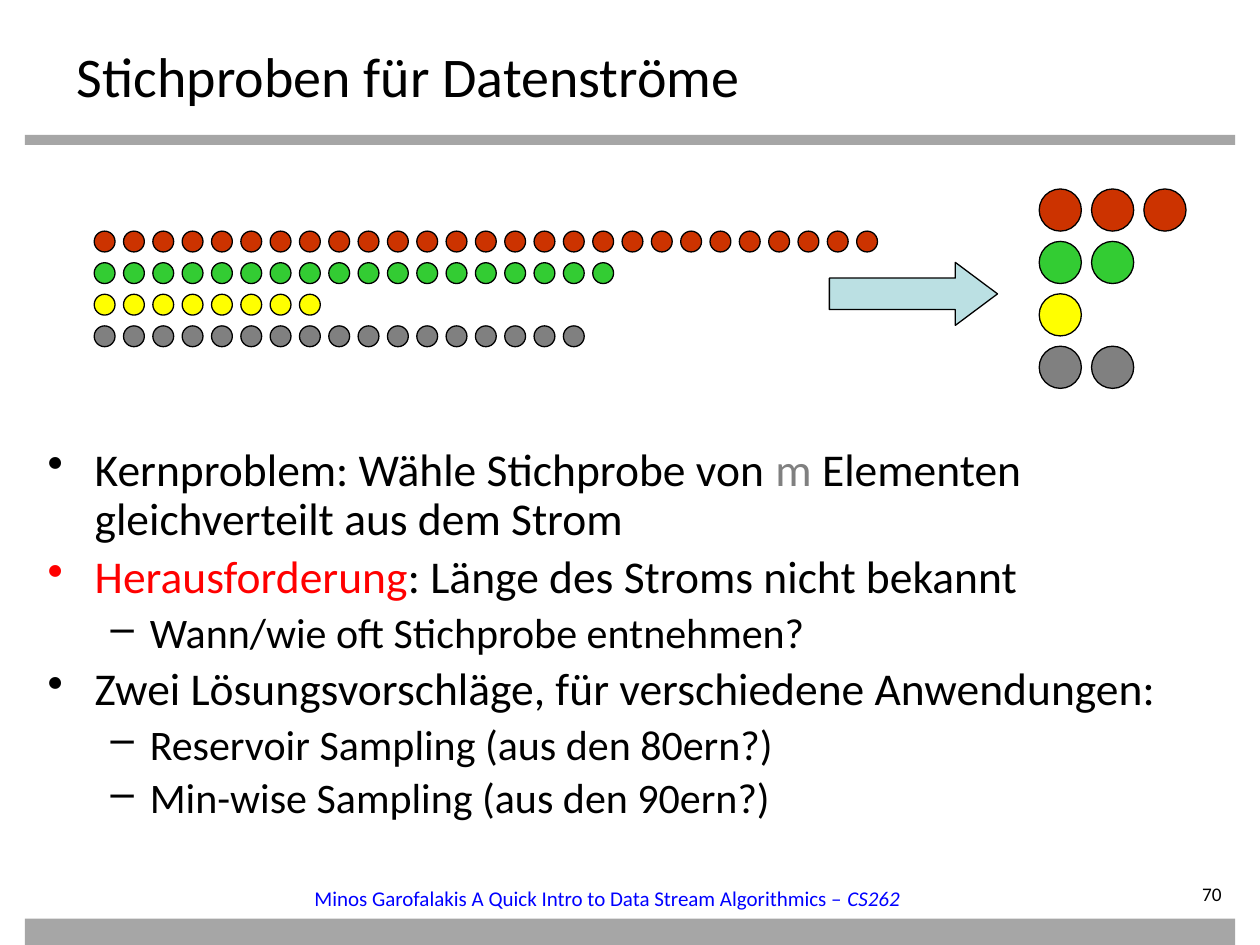
from lxml.etree import SubElement
from pptx import Presentation
from pptx.dml.color import RGBColor
from pptx.enum.shapes import MSO_SHAPE as Kind
from pptx.enum.text import PP_ALIGN as Align
from pptx.oxml.ns import qn
from pptx.util import Cm, Pt

FONT = "Calibri"
COLORS = {
    "text": "000000", "bar": "A6A6A6", "arrow": "BBE0E3", "link": "0000FF",
    "alert": "FF0000", "red": "CC3300", "green": "33CC33",
    "yellow": "FFFF00", "gray": "808080",
}
STREAM = {"red": 27, "green": 18, "yellow": 8, "gray": 17}
SAMPLE = {"red": 3, "green": 2, "yellow": 1, "gray": 2}

# Each point: level, then runs of (text, color)
POINTS = [
    (0, [("Kernproblem: Wähle Stichprobe von ", "text"), ("m ", "gray"),
         ("Elementen gleichverteilt aus dem Strom", "text")]),
    (0, [("Herausforderung", "alert"),
         (": Länge des Stroms nicht bekannt", "text")]),
    (1, [("Wann/wie oft Stichprobe entnehmen?", "text")]),
    (0, [("Zwei Lösungsvorschläge, für verschiedene Anwendungen:", "text")]),
    (1, [("Reservoir Sampling (aus den 80ern?)", "text")]),
    (1, [("Min-wise Sampling (aus den 90ern?)", "text")]),
]
# Bullet, text size, left margin and hanging indent by level
LEVELS = [("•", 26, 0.95, 0.95), ("–", 24, 2.06, 0.79)]


def color(name):
    return RGBColor.from_string(COLORS[name])


def add_shape(parts, kind, box, fill, line=True):
    shape = parts.add_shape(kind, *map(Cm, box))
    shape.shadow.inherit = False
    shape.fill.solid()
    shape.fill.fore_color.rgb = color(fill)
    if line:
        shape.line.color.rgb = color("text")
        shape.line.width = Pt(0.75)
    else:
        shape.line.fill.background()
    return shape


def add_frame(slide, box):
    frame = slide.shapes.add_textbox(*map(Cm, box)).text_frame
    frame.word_wrap = True
    return frame


def style(para, size, tint="text"):
    para.font.name = FONT
    para.font.size = Pt(size)
    para.font.color.rgb = color(tint)


def add_title(slide, box):
    para = add_frame(slide, box).paragraphs[0]
    para.text = "Stichproben für Datenströme"
    style(para, 32)


def add_dots(slide, box, rows, size):
    """Spread rows of dots so that the longest row fills the box."""
    left, top, width, height = box
    across = (width - size) / (max(rows.values()) - 1)
    down = (height - size) / (len(rows) - 1)
    group = slide.shapes.add_group_shape()
    for row, (tint, count) in enumerate(rows.items()):
        for col in range(count):
            spot = (left + col * across, top + row * down, size, size)
            add_shape(group.shapes, Kind.OVAL, spot, tint)


def add_figure(slide, box):
    left, top, _, _ = box
    add_dots(slide, (left, top + 0.85, 15.79, 2.33), STREAM, 0.42)
    add_dots(slide, (left + 19.05, top, 2.96, 4.02), SAMPLE, 0.85)
    arrow = add_shape(slide.shapes, Kind.RIGHT_ARROW,
                      (left + 14.82, top + 1.48, 3.39, 1.27), "arrow")
    arrow.adjustments[1] = 0.67


def add_points(slide, box):
    frame = add_frame(slide, box)
    for index, (level, runs) in enumerate(POINTS):
        para = frame.add_paragraph() if index else frame.paragraphs[0]
        mark, size, margin, hang = LEVELS[level]
        para.level = level
        para.line_spacing = 0.9
        if index:
            para.space_before = Pt(size * 0.2)
        props = para._p.get_or_add_pPr()
        props.set("marL", str(Cm(margin)))
        props.set("indent", str(-Cm(hang)))
        SubElement(props, qn("a:buChar")).set("char", mark)
        style(para, size)
        for text, tint in runs:
            run = para.add_run()
            run.text = text
            if tint != "text":
                run.font.color.rgb = color(tint)


def add_footer(slide, box):
    left, top, width, _ = box
    # Source line
    para = add_frame(slide, (left + 5.59, top, 13, 0.61)).paragraphs[0]
    para.add_run().text = (
        "Minos Garofalakis A Quick Intro to Data Stream Algorithmics – ")
    course = para.add_run()
    course.text = "CS262"
    course.font.italic = True
    style(para, 12, "link")
    # Page number
    frame = add_frame(slide, (left + width - 2.81, top + 0.05, 2.79, 0.56))
    frame.margin_left = frame.margin_top = frame.margin_bottom = 0
    para = frame.paragraphs[0]
    para.text = "70"
    para.alignment = Align.RIGHT
    style(para, 11)


def main():
    deck = Presentation()
    deck.slide_width, deck.slide_height = Cm(25.4), Cm(19.05)
    slide = deck.slides.add_slide(deck.slide_layouts[6])
    # Bars below the title and at the foot
    for top, height in ((2.72, 0.2), (18.52, 0.53)):
        add_shape(slide.shapes, Kind.RECTANGLE,
                  (0.5, top, 24.4, height), "bar", line=False)
    add_title(slide, (1.3, 0.71, 22.86, 1.4))
    add_points(slide, (0.71, 8.89, 24.05, 8.89))
    add_figure(slide, (1.9, 3.81, 22.01, 4.02))
    add_footer(slide, (0.5, 17.73, 24.4, 0.61))
    deck.save("out.pptx")


if __name__ == "__main__":
    main()
